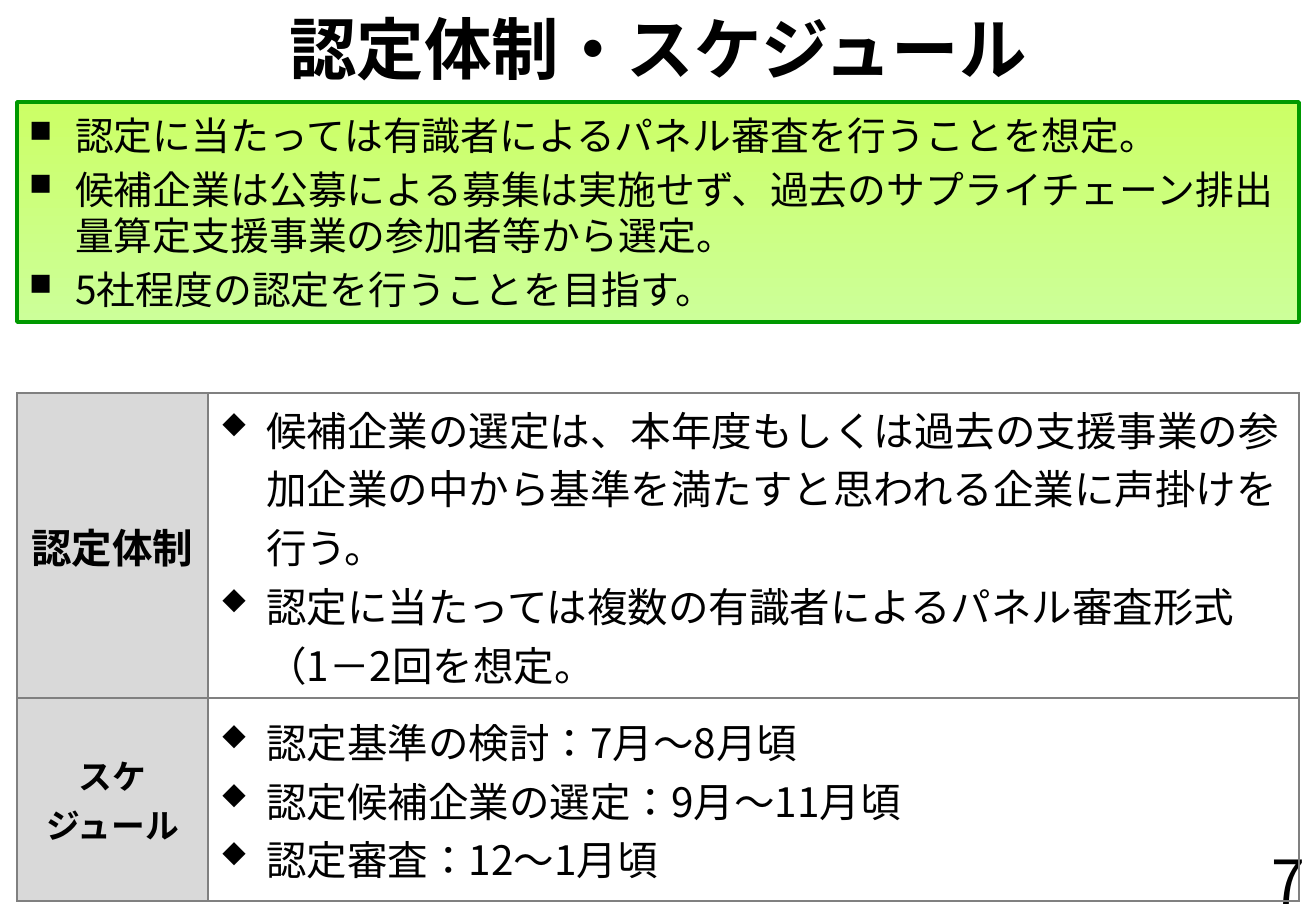
from lxml import etree
from pptx import Presentation
from pptx.dml.color import RGBColor
from pptx.enum.lang import MSO_LANGUAGE_ID
from pptx.enum.text import MSO_ANCHOR, MSO_AUTO_SIZE, PP_ALIGN
from pptx.oxml.ns import qn
from pptx.util import Pt

TITLE = "認定体制・スケジュール"
SUMMARY = [
    "認定に当たっては有識者によるパネル審査を行うことを想定。",
    "候補企業は公募による募集は実施せず、過去のサプライチェーン排出量算定支援事業の参加者等から選定。",
    "5社程度の認定を行うことを目指す。",
]
# heading, heading size in points, row height in px, items
ROWS = [
    ("認定体制", 24, 305, [
        "候補企業の選定は、本年度もしくは過去の支援事業の参加企業の中から基準を満たすと思われる企業に声掛けを行う。",
        "認定に当たっては複数の有識者によるパネル審査形式（1－2回を想定。",
    ]),
    ("スケジュール", 20, 203, [
        "認定基準の検討：7月～8月頃",
        "認定候補企業の選定：9月～11月頃",
        "認定審査：12～1月頃",
    ]),
]
PAGE_NUMBER = "7"

COLORS = {"text": "000000", "line": "009900", "bottom": "CCFF99", "top": "CCFF66",
          "heading": "D9D9D9", "border": "808080"}
CJK = "Noto Sans CJK JP"
HEADING_FONT = "Calibri"
SQUARE, DIAMOND = ("n", 80), ("u", 70)  # Wingdings letter, percent of text size
JAPANESE = MSO_LANGUAGE_ID.JAPANESE
CENTER, RIGHT = PP_ALIGN.CENTER, PP_ALIGN.RIGHT
TOP, MIDDLE = MSO_ANCHOR.TOP, MSO_ANCHOR.MIDDLE
NO_FIT = MSO_AUTO_SIZE.NONE

SLIDE_W, SLIDE_H = 1316, 911
LEFT, CONTENT_W = 17, 1282
COLUMNS = [191, CONTENT_W - 191]
INDENT = 46


def px(n):
    return round(n * 914400 / 121.5)


def rgb(name):
    return RGBColor.from_string(COLORS[name])


def place(sp, x, y, w, h):
    sp.left, sp.top, sp.width, sp.height = map(px, (x, y, w, h))


def write(tf, lines, size, font=CJK, bold=False, align=None, bullet=None):
    tf.text = "\n".join(lines)
    tf.word_wrap = True
    for p in tf.paragraphs:
        if align is not None:
            p.alignment = align
        if bullet:
            add_bullet(p, *bullet)
        for r in p.runs:
            f = r.font
            f.size, f.bold, f.name = Pt(size), bold, font
            f.language_id = JAPANESE
            f.color.rgb = rgb("text")
            latin = r._r.get_or_add_rPr().find(qn("a:latin"))
            latin.addnext(etree.Element(qn("a:ea"), typeface=CJK))


def add_bullet(p, char, percent):
    pPr = p._p.get_or_add_pPr()
    pPr.set("marL", str(px(INDENT)))
    pPr.set("indent", str(-px(INDENT)))
    etree.SubElement(pPr, qn("a:buSzPct"), val=str(percent * 1000))
    etree.SubElement(pPr, qn("a:buFont"), typeface="Wingdings", charset="2")
    etree.SubElement(pPr, qn("a:buChar"), char=char)


def style_cell(cell, fill=None):
    cell.vertical_anchor = MIDDLE
    if fill:
        cell.fill.solid()
        cell.fill.fore_color.rgb = rgb(fill)
    else:
        cell.fill.background()
    tcPr = cell._tc.get_or_add_tcPr()
    for i, side in enumerate(("lnL", "lnR", "lnT", "lnB")):
        ln = etree.Element(qn(f"a:{side}"), w=str(Pt(1)))
        solid = etree.SubElement(ln, qn("a:solidFill"))
        etree.SubElement(solid, qn("a:srgbClr"), val=COLORS["border"])
        tcPr.insert(i, ln)


prs = Presentation()
prs.slide_width, prs.slide_height = px(SLIDE_W), px(SLIDE_H)
s = prs.slides.add_slide(prs.slide_layouts[1])

title, summary = s.placeholders
place(title, 0, 1, SLIDE_W, 54)
tf = title.text_frame
write(tf, [TITLE], 40, bold=True, align=CENTER)
tf.auto_size, tf.vertical_anchor = NO_FIT, TOP
tf.margin_top, tf.margin_bottom = px(6), 0

place(summary, LEFT, 102, CONTENT_W, 220)
summary.fill.gradient()
summary.fill.gradient_angle = 90
for stop, name in zip(summary.fill.gradient_stops, ("bottom", "top")):
    stop.color.rgb = rgb(name)
summary.line.color.rgb = rgb("line")
summary.line.width = Pt(2.25)
tf = summary.text_frame
write(tf, SUMMARY, 23, bullet=SQUARE)
tf.auto_size, tf.vertical_anchor = NO_FIT, MIDDLE
for p in tf.paragraphs:
    p.space_before, p.line_spacing = Pt(4), 1.0

number = s.shapes.add_textbox(px(1155), px(838), px(160), px(73))
tf = number.text_frame
write(tf, [PAGE_NUMBER], 36, align=RIGHT)
tf.vertical_anchor = MIDDLE
tf.margin_top, tf.margin_right = px(18), px(10)

table = s.shapes.add_table(len(ROWS), len(COLUMNS), px(LEFT), px(393), px(CONTENT_W),
                           px(sum(row[2] for row in ROWS))).table
table.first_row = table.horz_banding = False
for column, width in zip(table.columns, COLUMNS):
    column.width = px(width)
for i, (heading, size, height, items) in enumerate(ROWS):
    table.rows[i].height = px(height)
    head, body = table.cell(i, 0), table.cell(i, 1)
    write(head.text_frame, [heading], size, HEADING_FONT, bold=True, align=CENTER)
    write(body.text_frame, items, 24, bullet=DIAMOND)
    style_cell(head, "heading")
    style_cell(body)

prs.save("out.pptx")
